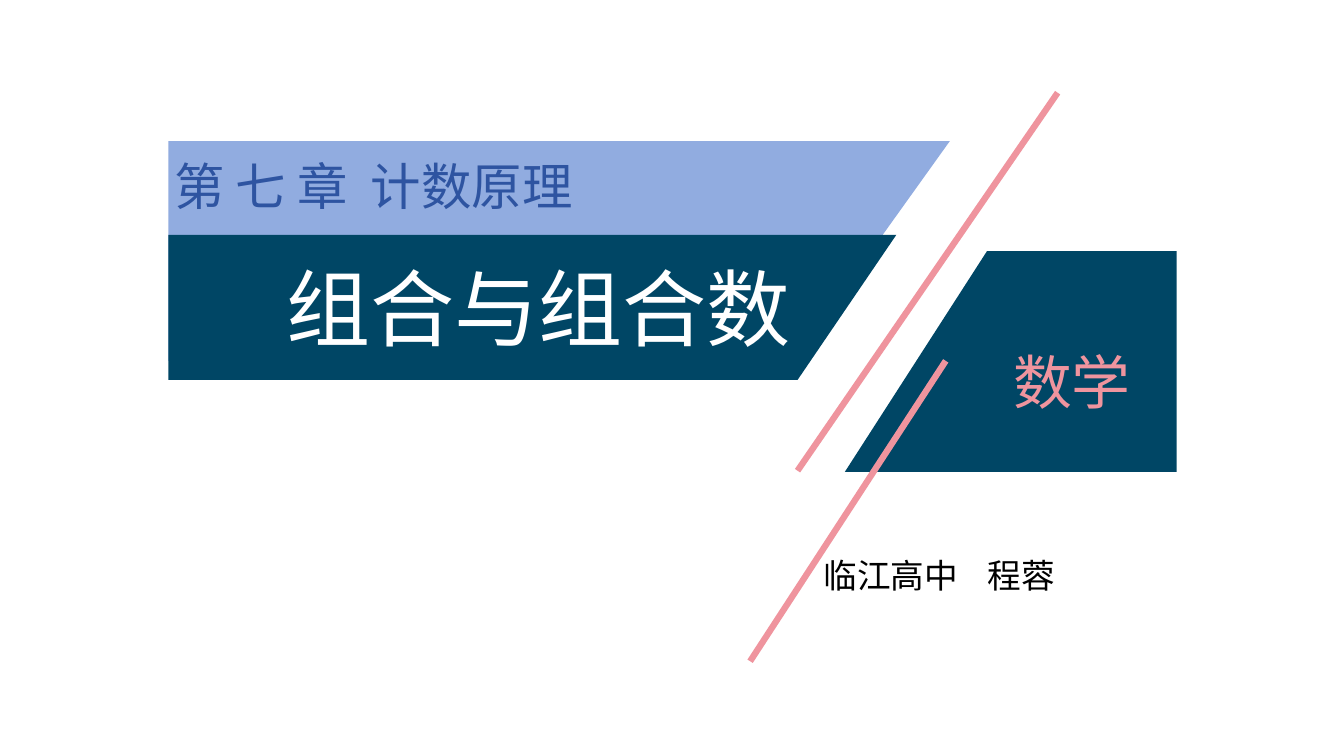
"""Build the title slide for the lesson on combinations."""
from pptx import Presentation, util as u
from pptx.dml.color import RGBColor
from pptx.enum import shapes, text
from pptx.oxml.ns import qn
from lxml import etree

TEAL = RGBColor(0x00, 0x46, 0x65)
PERIWINKLE = RGBColor(0x91, 0xAC, 0xE0)
PINK = RGBColor(0xEF, 0x94, 0x9E)
BLUE = RGBColor(0x2E, 0x54, 0xA1)
WHITE = RGBColor(0xFF, 0xFF, 0xFF)
BLACK = RGBColor(0x00, 0x00, 0x00)
SC, JP, TIMES = "Noto Sans CJK SC", "Noto Sans CJK JP", "Times New Roman"
GROW, FIXED = text.MSO_AUTO_SIZE.SHAPE_TO_FIT_TEXT, text.MSO_AUTO_SIZE.NONE
TOP, BOTTOM = text.MSO_ANCHOR.TOP, text.MSO_ANCHOR.BOTTOM

prs = Presentation()
prs.slide_width, prs.slide_height = u.Inches(13.33), u.Inches(7.5)
s = prs.slides.add_slide(prs.slide_layouts[6])

bands = [
    (TEAL, [(11.67, 4.68), (8.38, 4.68), (9.79, 2.49), (11.67, 2.49)]),
    (PERIWINKLE, [(1.67, 1.4), (9.42, 1.4), (7.86, 3.58), (1.67, 3.58)]),
    (TEAL, [(1.67, 2.33), (8.89, 2.33), (7.91, 3.77), (1.67, 3.77)]),
]
for color, corners in bands:
    points = [(u.Inches(x), u.Inches(y)) for x, y in corners]
    builder = s.shapes.build_freeform(*points[0])
    builder.add_line_segments(points[1:], close=True)
    sp = builder.convert_to_shape()
    sp.shadow.inherit = False
    sp.fill.solid()
    sp.fill.fore_color.rgb = color
    sp.line.fill.background()

for ends in [(7.44, 6.56, 9.38, 3.58), (10.49, 0.92, 7.91, 4.67)]:
    stroke = s.shapes.add_connector(shapes.MSO_CONNECTOR.STRAIGHT, *map(u.Inches, ends))
    stroke.line.color.rgb = PINK
    stroke.line.width = u.Pt(4.5)
    etree.SubElement(stroke._element.spPr, qn("a:effectLst"))

labels = [
    ("数学", (9.95, 3.38, 1.62, 0.81), SC, SC, 42, PINK, GROW, TOP, None),
    ("组合与组合数", (2.74, 2.5, 7.73, 1.11), JP, JP, 60, WHITE, GROW, TOP, None),
    ("临江高中\t程蓉", (8.07, 5.46, 3.89, 0.67), SC, SC, 24, BLACK, FIXED, TOP, 1.63),
    ("第 七 章\t计数原理", (1.63, 0.91, 5.97, 1.28), TIMES, SC, 36, BLUE, FIXED, BOTTOM, 1.95),
]
for words, box, latin, east_asian, size, color, fit, anchor, tab in labels:
    tf = s.shapes.add_textbox(*map(u.Inches, box)).text_frame
    for name, value in {"word_wrap": True, "auto_size": fit, "vertical_anchor": anchor}.items():
        setattr(tf, name, value)
    p = tf.paragraphs[0]
    if tab:
        tabs = etree.SubElement(p._p.get_or_add_pPr(), qn("a:tabLst"))
        etree.SubElement(tabs, qn("a:tab"), pos=str(u.Inches(tab)), algn="l")
    r = p.add_run()
    r.text = words
    for name, value in {"name": latin, "size": u.Pt(size)}.items():
        setattr(r.font, name, value)
    r.font.color.rgb = color
    etree.SubElement(r._r.get_or_add_rPr(), qn("a:ea"), typeface=east_asian)

prs.save("out.pptx")
